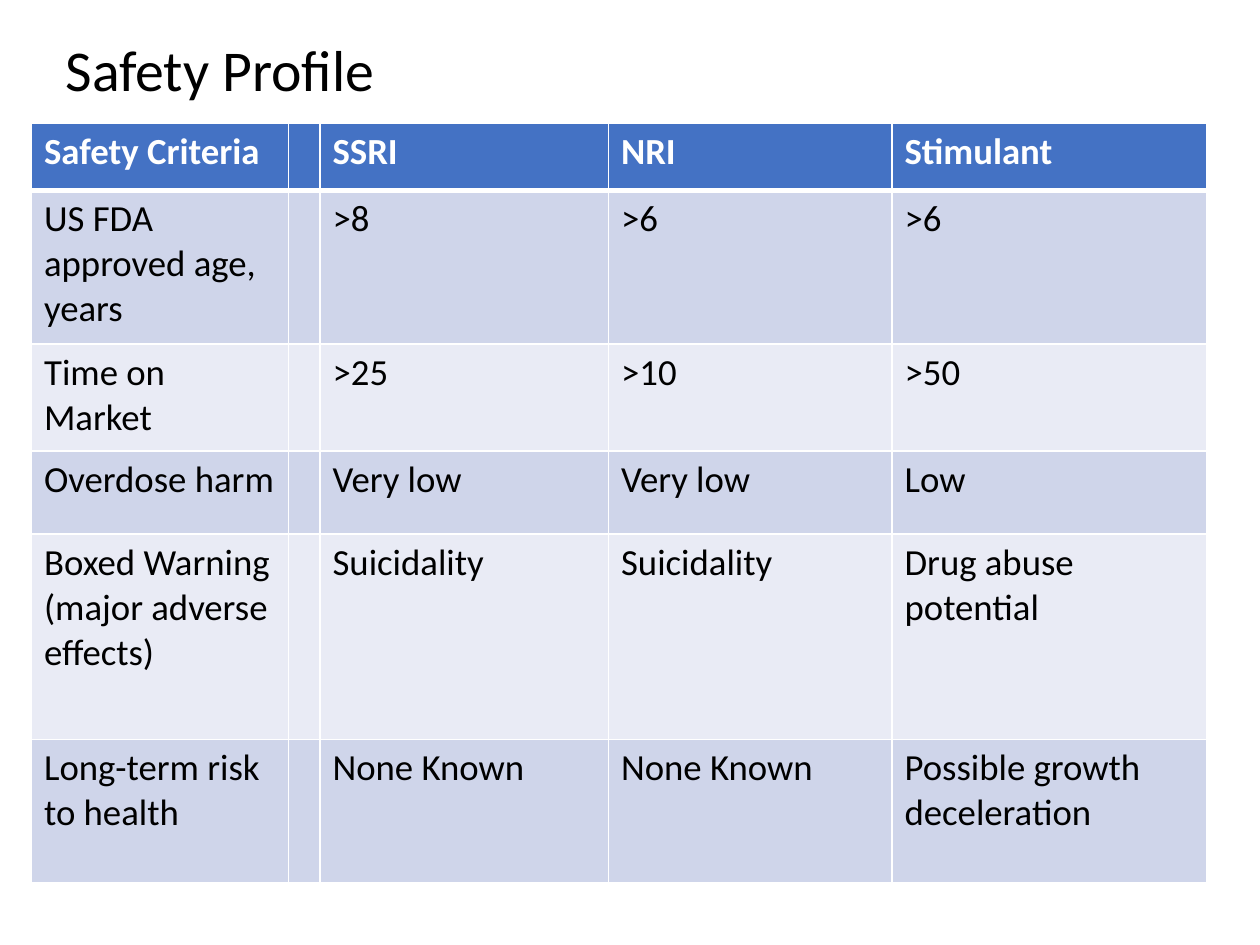
from lxml.etree import SubElement
from pptx import Presentation
from pptx.dml.color import RGBColor
from pptx.enum.text import MSO_ANCHOR, MSO_AUTO_SIZE, PP_ALIGN
from pptx.oxml.ns import qn
from pptx.util import Inches, Pt

COLORS = {
    "text": "000000",
    "header": "4472C4",
    "header_text": "FFFFFF",
    "band_dark": "CFD5EA",
    "band_light": "E9EBF5",
    "border": "FFFFFF",
}

COLUMN_WIDTHS = [2.04, 0.25, 2.29, 2.25, 2.5]
ROW_HEIGHTS = [0.53, 1.22, 0.85, 0.66, 1.63, 1.14]
SAFETY_ROWS = [
    ["Safety Criteria", "", "SSRI", "NRI", "Stimulant"],
    ["US FDA approved age, years", "", ">8", ">6", ">6"],
    ["Time on Market", "", ">25", ">10", ">50"],
    ["Overdose harm", "", "Very low", "Very low", "Low"],
    ["Boxed Warning (major adverse effects)", "",
     "Suicidality", "Suicidality", "Drug abuse potential"],
    ["Long-term risk to health", "",
     "None Known", "None Known", "Possible growth deceleration"],
]


def write_text(frame, text, size=21, color="text", bold=False, line_spacing=None):
    paragraph = frame.paragraphs[0]
    paragraph.alignment = PP_ALIGN.LEFT
    paragraph.line_spacing = line_spacing
    run = paragraph.add_run()
    run.text = text
    run.font.name = "Calibri"
    run.font.size = Pt(size)
    run.font.bold = bold
    run.font.color.rgb = RGBColor.from_string(COLORS[color])


class SlideBuilder:
    def __init__(self, slide):
        self.slide = slide

    def title(self, text, left, top, width, height):
        title = self.slide.shapes.title
        title.left, title.top = Inches(left), Inches(top)
        title.width, title.height = Inches(width), Inches(height)
        frame = title.text_frame
        frame.auto_size = MSO_AUTO_SIZE.NONE
        frame.vertical_anchor = MSO_ANCHOR.MIDDLE
        write_text(frame, text, size=33, line_spacing=0.9)

    def border(self, cell, side, points):
        line = SubElement(cell._tc.get_or_add_tcPr(), qn(f"a:ln{side}"),
                          w=str(Pt(points)))
        fill = SubElement(line, qn("a:solidFill"))
        SubElement(fill, qn("a:srgbClr"), val=COLORS["border"])

    def cell(self, cell, text, row):
        is_header = row == 0
        # Borders come before the fill in the cell properties
        widths = {"L": 1, "R": 1, "T": 3 if row == 1 else 1, "B": 3 if is_header else 1}
        for side, points in widths.items():
            self.border(cell, side, points)
        band = "band_dark" if row % 2 else "band_light"
        cell.fill.solid()
        cell.fill.fore_color.rgb = RGBColor.from_string(
            COLORS["header" if is_header else band])
        if text:
            write_text(cell.text_frame, text, bold=is_header,
                       color="header_text" if is_header else "text")

    def table(self, rows, left, top, column_widths, row_heights):
        table = self.slide.shapes.add_table(
            len(rows), len(column_widths), Inches(left), Inches(top),
            Inches(sum(column_widths)), Inches(sum(row_heights))).table
        for column, width in zip(table.columns, column_widths):
            column.width = Inches(width)
        for table_row, height in zip(table.rows, row_heights):
            table_row.height = Inches(height)
        for r, texts in enumerate(rows):
            for c, text in enumerate(texts):
                self.cell(table.cell(r, c), text, r)


def main():
    deck = Presentation()
    deck.slide_width, deck.slide_height = Inches(10), Inches(7.5)
    title_only = deck.slide_layouts[5]
    builder = SlideBuilder(deck.slides.add_slide(title_only))

    # Heading
    builder.title("Safety Profile", 0.42, 0.17, 9.17, 0.81)

    # Comparison of the drug classes
    builder.table(SAFETY_ROWS, 0.25, 0.98, COLUMN_WIDTHS, ROW_HEIGHTS)

    deck.save("out.pptx")


if __name__ == "__main__":
    main()
